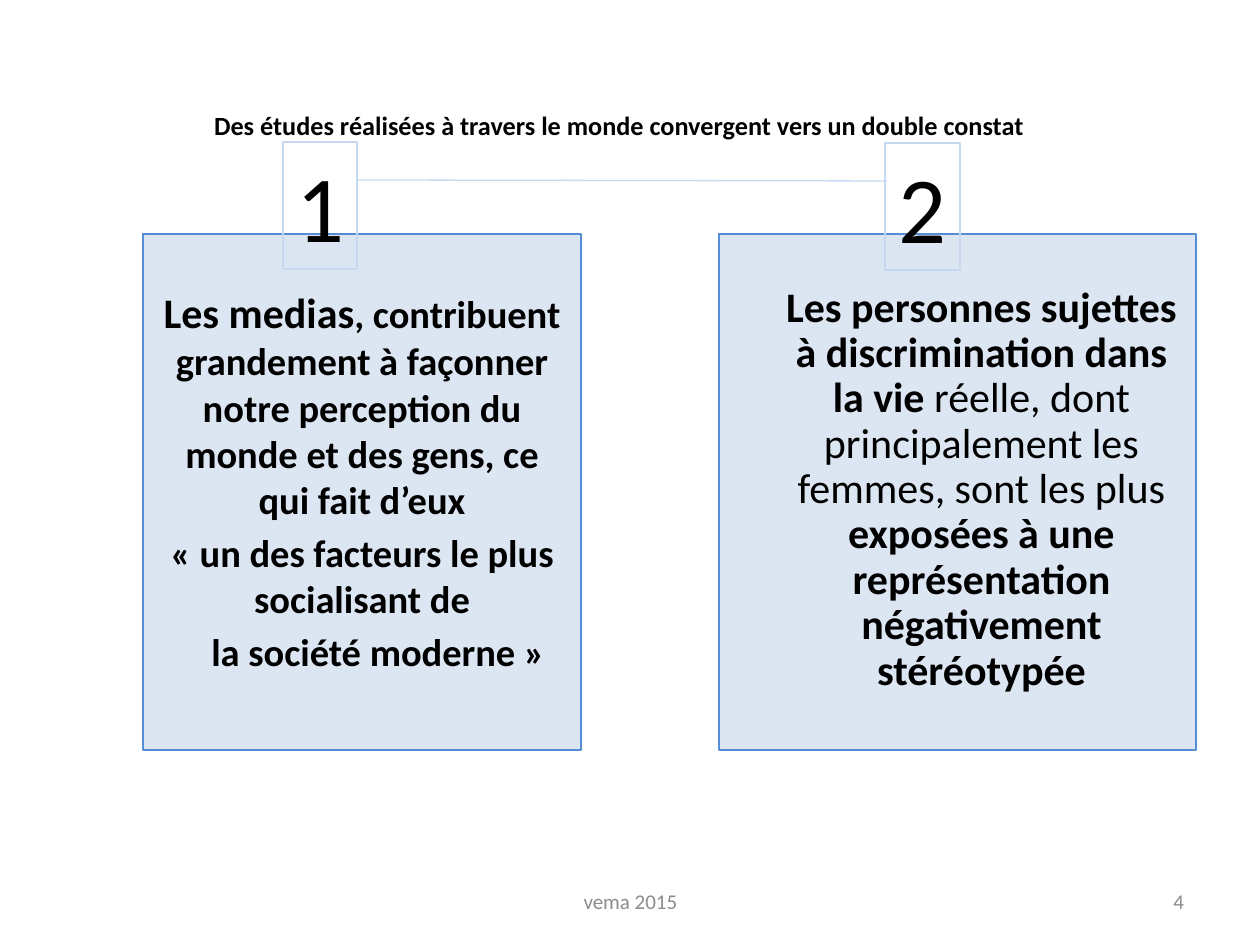
"""Build the slide on the double finding about media and stereotypes."""
from lxml.etree import SubElement
from pptx import Presentation
from pptx.dml.color import RGBColor
from pptx.enum.shapes import MSO_CONNECTOR as Connector, MSO_SHAPE as Shape
from pptx.enum.text import MSO_ANCHOR as Anchor, MSO_AUTO_SIZE as AutoSize, PP_ALIGN as Align
from pptx.oxml.ns import qn
from pptx.util import Inches, Pt

COLORS = {"text": "000000", "panel": "DCE6F2", "border": "558ED5",
          "pale": "C6D9F1", "footer": "8C8C8C"}
PX = Inches(1) / 126
INSET_X, INSET_Y = 13, 6

TITLE = {"text": "Des études réalisées à travers le monde convergent vers un double constat",
         "box": (94, 69, 1134, 149), "insets": (120, 40)}
PANELS = [
    {"box": (143, 234, 438, 516), "top": 53, "spacing": 1.0, "paragraphs": [
        (0, [("Les medias", 24, True),
             (", contribuent grandement à façonner notre perception du monde "
              "et des gens, ce qui fait d’eux", 22, True)]),
        (0, [("« un des facteurs le plus socialisant de", 22, True)]),
        (32, [("la société moderne »", 22, True)])]},
    {"box": (719, 234, 477, 516), "top": 52, "spacing": 0.9, "paragraphs": [
        (48, [("Les personnes sujettes à discrimination dans la vie ", 24, True),
              ("réelle, dont principalement les femmes, sont les plus ", 24, False),
              ("exposées à une représentation négativement stéréotypée", 24, True)])]},
]
NUMBERS = [("2", (885, 143, 75, 127)), ("1", (283, 142, 74, 127))]
LINK = (358, 180, 887, 181)
FOOTERS = [("vema 2015", (431, 876, 399, 50), Align.CENTER),
           ("4", (903, 876, 294, 50), Align.RIGHT)]


def px(value):
    return round(value * PX)


def color(name):
    return RGBColor.from_string(COLORS[name])


def apply(target, values):
    for name, value in values.items():
        setattr(target, name, value)


def place(shape, box):
    apply(shape, dict(zip(("left", "top", "width", "height"), map(px, box))))


def set_frame(frame, left=INSET_X, top=INSET_Y, anchor=Anchor.TOP, wrap=True):
    apply(frame, {"word_wrap": wrap, "auto_size": AutoSize.NONE,
                  "vertical_anchor": anchor,
                  "margin_left": px(left), "margin_right": px(INSET_X),
                  "margin_top": px(top), "margin_bottom": px(INSET_Y)})


def add_run(paragraph, text, size, bold=False, shade="text"):
    run = paragraph.add_run()
    run.text = text
    apply(run.font, {"name": "Calibri", "size": Pt(size), "bold": bold})
    run.font.color.rgb = color(shade)


def set_line(shape, name):
    shape.line.color.rgb = color(name)
    shape.line.width = Pt(0.75)


def fill_title(shape):
    place(shape, TITLE["box"])
    set_frame(shape.text_frame, *TITLE["insets"])
    paragraph = shape.text_frame.paragraphs[0]
    paragraph.alignment = Align.LEFT
    add_run(paragraph, TITLE["text"], 15, True)


def fill_panel(shape, panel):
    place(shape, panel["box"])
    shape.fill.solid()
    shape.fill.fore_color.rgb = color("panel")
    set_line(shape, "border")
    frame = shape.text_frame
    set_frame(frame, top=panel["top"])
    for index, (indent, runs) in enumerate(panel["paragraphs"]):
        paragraph = frame.add_paragraph() if index else frame.paragraphs[0]
        apply(paragraph, {"alignment": Align.CENTER, "line_spacing": panel["spacing"],
                          "space_before": Pt(4 if index else 0)})
        properties = paragraph._p.get_or_add_pPr()
        properties.set("marL", str(px(indent)))
        properties.set("indent", "0")
        SubElement(properties, qn("a:buNone"))
        for run in runs:
            add_run(paragraph, *run)


def add_number(slide, text, box):
    shape = slide.shapes.add_shape(Shape.RECTANGLE, *map(px, box))
    shape.shadow.inherit = False
    shape.fill.background()
    set_line(shape, "pale")
    set_frame(shape.text_frame, wrap=False)
    paragraph = shape.text_frame.paragraphs[0]
    paragraph.alignment = Align.CENTER
    add_run(paragraph, text, 54)


def add_link(slide):
    link = slide.shapes.add_connector(Connector.STRAIGHT, *map(px, LINK))
    set_line(link, "pale")
    SubElement(link._element.spPr, qn("a:effectLst"))


def add_footer(slide, text, box, alignment):
    shape = slide.shapes.add_textbox(*map(px, box))
    set_frame(shape.text_frame, anchor=Anchor.MIDDLE)
    paragraph = shape.text_frame.paragraphs[0]
    paragraph.alignment = alignment
    add_run(paragraph, text, 12, shade="footer")


def main():
    presentation = Presentation()
    apply(presentation, {"slide_width": Inches(10), "slide_height": Inches(7.5)})
    layout = presentation.slide_layouts.get_by_name("Two Content")
    slide = presentation.slides.add_slide(layout)
    title, *bodies = slide.placeholders
    fill_title(title)
    for body, panel in zip(bodies, PANELS):
        fill_panel(body, panel)
    for number in NUMBERS:
        add_number(slide, *number)
    add_link(slide)
    for footer in FOOTERS:
        add_footer(slide, *footer)
    presentation.save("out.pptx")


if __name__ == "__main__":
    main()
